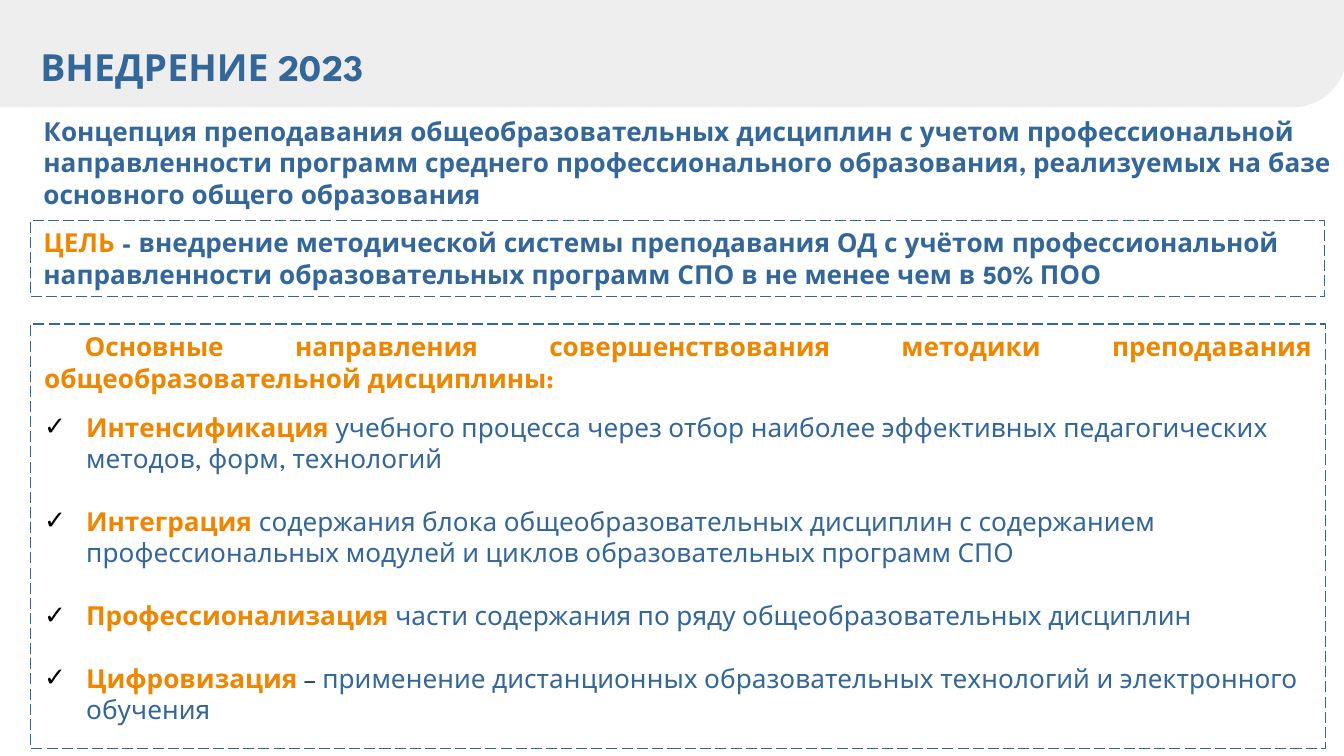
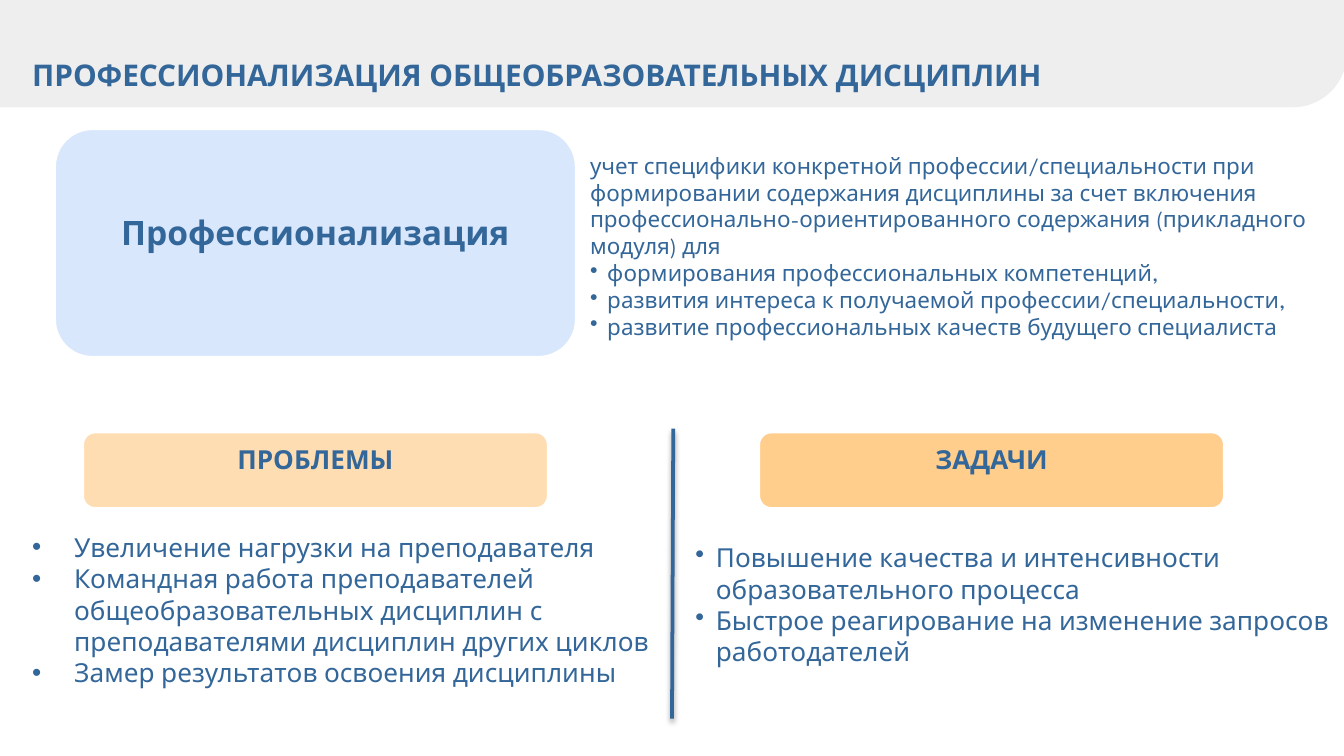
from dataclasses import dataclass

from lxml import etree
from pptx import Presentation
from pptx import util as u
from pptx.dml import color
from pptx.enum import dml, shapes, text
from pptx.oxml import ns

Pt = u.Pt


@dataclass(frozen=True)
class Theme:
    font: str = "League Spartan"
    bullet_font: str = "Arial"
    blue: str = "336699"
    navy: str = "17375E"
    orange: str = "EF8600"
    black: str = "000000"
    white: str = "FFFFFF"
    band: str = "EEEEEE"
    sky: str = "D9E7FD"
    peach: str = "FFDDB3"
    apricot: str = "FFCD8C"
    title: int = 20
    long_title: int = 16
    card: int = 18
    body: int = 14
    small: int = 12


THEME = Theme()


def rgb(value):
    return color.RGBColor.from_string(value)


def apply(target, values):
    for name, value in values.items():
        setattr(target, name, value)


def child(parent, tag, **attributes):
    return etree.SubElement(parent, ns.qn(tag), attributes)


class Page:
    """Holds the theme and the slide being filled."""

    def __init__(self, deck, layout, theme=THEME):
        self.theme = theme
        self.slide = deck.slides.add_slide(deck.slide_layouts[layout])
        self.band()

    # Shared top band, placed behind the title
    def band(self):
        band = self.shape(shapes.MSO_SHAPE.ROUND_1_RECTANGLE, (0, -0.5, 721.5, 58), self.theme.band)
        band.adjustments[0] = 0.5
        band.rotation = 180
        band.element.spPr.xfrm.set("flipH", "1")
        self.slide.shapes.element.insert(2, band.element)

    def shape(self, kind, area, fill=None, line=None, width=0.75, dash=None):
        shape = self.slide.shapes.add_shape(kind, *map(Pt, area))
        shape.shadow.inherit = False
        if fill:
            shape.fill.solid()
            shape.fill.fore_color.rgb = rgb(fill)
        else:
            shape.fill.background()
        self.outline(shape, line, width, dash)
        return shape

    def outline(self, shape, line, width=0.75, dash=None):
        if not line:
            shape.line.fill.background()
            return
        shape.line.color.rgb = rgb(line)
        apply(shape.line, {"width": Pt(width), "dash_style": dash})

    def dashed(self, shape):
        self.outline(shape, self.theme.blue, dash=dml.MSO_LINE.LONG_DASH)

    # Text: each paragraph is a list of (words, colour, bold) spans plus a layout
    def fill_text(self, box, paragraphs, size, insets=(7.2, 3.6, 7.2, 3.6),
                  anchor=text.MSO_ANCHOR.TOP):
        frame = box.text_frame
        sides = ("margin_left", "margin_top", "margin_right", "margin_bottom")
        apply(frame, {"word_wrap": True, "auto_size": text.MSO_AUTO_SIZE.NONE,
                      "vertical_anchor": anchor, **dict(zip(sides, map(Pt, insets)))})
        for number, (spans, form) in enumerate(paragraphs):
            para = frame.add_paragraph() if number else frame.paragraphs[0]
            self.style_paragraph(para, **form)
            for words, colour, bold in spans:
                span = para.add_run()
                span.text = words
                apply(span.font, {"name": self.theme.font, "size": Pt(size), "bold": bold})
                span.font.color.rgb = rgb(colour)

    def style_paragraph(self, para, bullet=None, bullet_colour=None, bullet_font=None,
                        hang=0, first=0, before=0, align=text.PP_ALIGN.LEFT, spacing=1.0):
        properties = para._p.get_or_add_pPr()
        properties.set("marL", str(Pt(hang)))
        properties.set("indent", str(Pt(first - hang)))
        if bullet:
            child(child(properties, "a:buClr"), "a:srgbClr", val=bullet_colour or self.theme.blue)
            if bullet_font:
                child(properties, "a:buFont", typeface=bullet_font)
            else:
                child(properties, "a:buFontTx")
            child(properties, "a:buChar", char=bullet)
        else:
            child(properties, "a:buNone")
        apply(para, {"alignment": align, "space_before": Pt(before),
                     "space_after": Pt(0), "line_spacing": spacing})

    def placeholder(self, index, area):
        holder = self.slide.placeholders[index]
        apply(holder, dict(zip(("left", "top", "width", "height"), map(Pt, area))))
        return holder

    def title(self, words, left, top, size):
        holder = self.placeholder(0, (left, top, 664.5, 46))
        self.fill_text(holder, [([(words, self.theme.blue, True)], {"spacing": 1.15})],
                       size, insets=(7.2,) * 4)

    def body(self, index, area, paragraphs):
        holder = self.placeholder(index, area)
        self.fill_text(holder, paragraphs, self.theme.body)
        return holder

    def text(self, area, paragraphs, size):
        box = self.slide.shapes.add_textbox(*map(Pt, area))
        self.fill_text(box, paragraphs, size)

    # Rounded card whose label sits 6 pt above the middle
    def card(self, words, area, fill, size):
        box = self.shape(shapes.MSO_SHAPE.ROUNDED_RECTANGLE, area, fill, self.theme.white, 2)
        self.fill_text(box, [([(words, self.theme.blue, True)], {"align": text.PP_ALIGN.CENTER})],
                       size, insets=(7.2, 3.6, 7.2, 15.6), anchor=text.MSO_ANCHOR.MIDDLE)

    def divider(self, start, end):
        line = self.slide.shapes.add_connector(
            shapes.MSO_CONNECTOR.STRAIGHT, *map(Pt, start + end))
        self.outline(line, self.theme.blue, 2)
        effects = child(line.element.spPr, "a:effectLst")
        shadow = child(effects, "a:outerShdw", blurRad=str(Pt(3.1)), dist=str(Pt(1.6)),
                       dir="5400000", rotWithShape="0")
        child(child(shadow, "a:srgbClr", val=self.theme.black), "a:alpha", val="38000")


def plain(words, **form):
    return [(words, THEME.blue, False)], form


def build_implementation(deck):
    page = Page(deck, 1)
    page.title("ВНЕДРЕНИЕ 2023", 14.4, 13, THEME.title)

    # Directions of improvement
    heading = "Основные направления совершенствования методики преподавания общеобразовательной дисциплины:"
    directions = [
        ("Интенсификация ", "", "учебного процесса через отбор наиболее эффективных "
         "педагогических методов, форм, технологий"),
        ("Интеграция ", "", "содержания блока общеобразовательных дисциплин с содержанием "
         "профессиональных модулей и циклов образовательных программ СПО"),
        ("Профессионализация ", "", "части содержания по ряду общеобразовательных дисциплин"),
        ("Цифровизация ", "– ", "применение дистанционных образовательных технологий "
         "и электронного обучения"),
    ]
    paragraphs = [([(heading, THEME.orange, True)],
                   {"align": text.PP_ALIGN.JUSTIFY, "first": 21.6})]
    for number, (term, dash, meaning) in enumerate(directions):
        spans = [(term, THEME.orange, True), (dash, THEME.navy, False), (meaning, THEME.blue, False)]
        form = {"bullet": "✓", "bullet_colour": THEME.black, "bullet_font": THEME.bullet_font,
                "hang": 22.5, "before": 16.8 if number else 9.5}
        paragraphs.append(([span for span in spans if span[0]], form))
    page.dashed(page.body(1, (16.5, 173.5, 693.5, 227.5), paragraphs))

    # Goal
    goal = page.shape(shapes.MSO_SHAPE.RECTANGLE, (16.2, 118, 693.5, 41))
    page.dashed(goal)
    page.fill_text(goal, [([
        ("ЦЕЛЬ", THEME.orange, True),
        (" - внедрение методической системы преподавания ОД с учётом профессиональной "
         "направленности образовательных программ СПО в не менее чем в 50% ПОО", THEME.blue, True),
    ], {})], THEME.body)

    # Concept
    concept = ("Концепция преподавания общеобразовательных дисциплин с учетом профессиональной "
               "направленности программ среднего профессионального образования, реализуемых "
               "на базе основного общего образования")
    page.text((16.2, 58.3, 705.6, 58), [([(concept, THEME.blue, True)], {})], THEME.body)


def build_professionalization(deck):
    page = Page(deck, 3)
    page.title("ПРОФЕССИОНАЛИЗАЦИЯ ОБЩЕОБРАЗОВАТЕЛЬНЫХ ДИСЦИПЛИН", 10, 20.2, THEME.long_title)

    # Definition
    aims = ["формирования профессиональных компетенций,",
            "развития интереса к получаемой профессии/специальности,",
            "развитие профессиональных качеств будущего специалиста"]
    definition = plain("учет специфики конкретной профессии/специальности при формировании "
                       "содержания дисциплины за счет включения профессионально-ориентированного "
                       "содержания (прикладного модуля) для")
    page.text((309, 77.8, 422, 108.7),
              [definition] + [plain(aim, bullet="•", hang=9.2) for aim in aims], THEME.small)
    page.card("Профессионализация", (29, 68.7, 280, 123), THEME.sky, THEME.card)

    # Column headings and divider
    for words, left, fill in (("ПРОБЛЕМЫ", 44, THEME.peach), ("ЗАДАЧИ", 406.2, THEME.apricot)):
        page.card(words, (left, 231.2, 250, 41.5), fill, THEME.body)
    page.divider((360.7, 229.7), (360, 385))

    # Column lists
    problems = ["Увеличение нагрузки на преподавателя",
                "Командная работа преподавателей общеобразовательных дисциплин "
                "с преподавателями дисциплин других циклов",
                "Замер результатов освоения дисциплины"]
    tasks = ["Повышение качества и интенсивности образовательного процесса",
             "Быстрое реагирование на изменение запросов работодателей"]
    page.body(1, (10, 281, 365, 92),
              [plain(item, bullet="•", bullet_font=THEME.bullet_font, hang=22.5)
               for item in problems])
    page.body(2, (365.3, 286.5, 365, 75),
              [plain(item, bullet="•", hang=11) for item in tasks])


def main():
    deck = Presentation()
    apply(deck, {"slide_width": Pt(720), "slide_height": Pt(405)})
    build_implementation(deck)
    build_professionalization(deck)
    deck.save("out.pptx")


if __name__ == "__main__":
    main()
